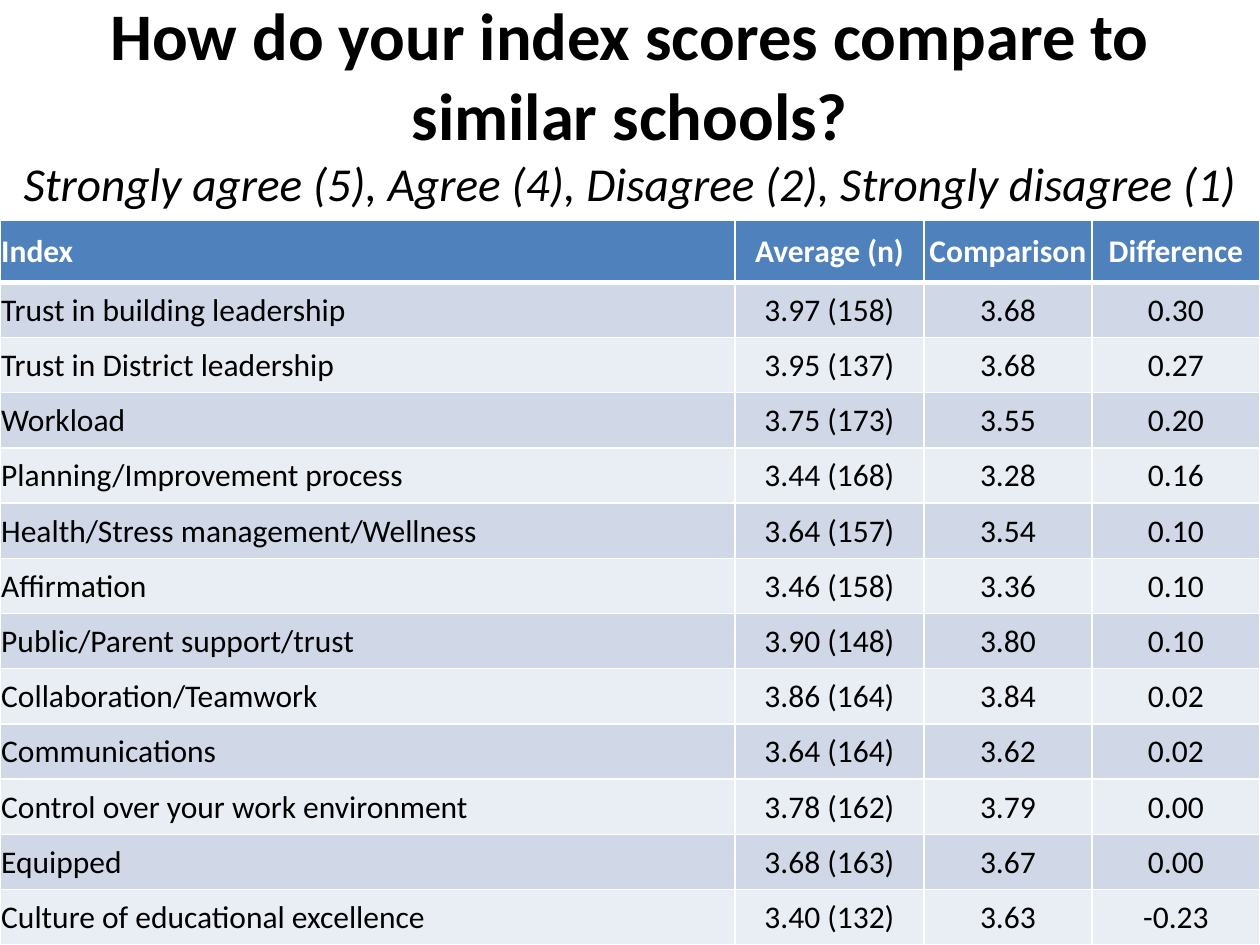
from lxml.etree import SubElement
from pptx import Presentation
from pptx.dml.color import RGBColor
from pptx.enum.text import MSO_ANCHOR as Anchor, PP_ALIGN as Align
from pptx.oxml.ns import qn
from pptx.util import Inches, Pt

TITLE = "How do your index scores compare to similar schools?"
SCALE = "Strongly agree (5), Agree (4), Disagree (2), Strongly disagree (1)"
HEADER = ("Index", "Average (n)", "Comparison", "Difference")
SCORES = [
    ("Trust in building leadership", "3.97 (158)", "3.68", "0.30"),
    ("Trust in District leadership", "3.95 (137)", "3.68", "0.27"),
    ("Workload", "3.75 (173)", "3.55", "0.20"),
    ("Planning/Improvement process", "3.44 (168)", "3.28", "0.16"),
    ("Health/Stress management/Wellness", "3.64 (157)", "3.54", "0.10"),
    ("Affirmation", "3.46 (158)", "3.36", "0.10"),
    ("Public/Parent support/trust", "3.90 (148)", "3.80", "0.10"),
    ("Collaboration/Teamwork", "3.86 (164)", "3.84", "0.02"),
    ("Communications", "3.64 (164)", "3.62", "0.02"),
    ("Control over your work environment", "3.78 (162)", "3.79", "0.00"),
    ("Equipped", "3.68 (163)", "3.67", "0.00"),
    ("Culture of educational excellence", "3.40 (132)", "3.63", "-0.23"),
]

WIDTH, HEIGHT = 10, 7.5
TABLE_TOP, HEADER_HEIGHT = 1.75, 0.49
COLUMN_SHARES = (35, 9, 8, 8)
BLACK, WHITE, BLUE = "000000", "FFFFFF", "4F81BD"
BANDS = ("D0D8E8", "E9EDF4")
THIN, THICK = 1, 3
CELL_FORMAT = {
    "vertical_anchor": Anchor.MIDDLE,
    "margin_left": Inches(0.01),
    "margin_top": Inches(0.01),
    "margin_right": Inches(0.01),
    "margin_bottom": 0,
}


def color(value):
    return RGBColor.from_string(value)


def set_attributes(target, values):
    for name, value in values.items():
        setattr(target, name, value)


def format_font(font, size, fill, bold=False, italic=False):
    set_attributes(font, {"name": "Calibri", "size": Pt(size), "bold": bold, "italic": italic})
    font.color.rgb = color(fill)


def add_borders(cell, top, bottom):
    """Give the cell white borders; call before its fill is set."""
    properties = cell._tc.get_or_add_tcPr()
    for side, width in (("L", THIN), ("R", THIN), ("T", top), ("B", bottom)):
        line = SubElement(properties, qn(f"a:ln{side}"), w=str(Pt(width)))
        SubElement(SubElement(line, qn("a:solidFill")), qn("a:srgbClr"), val=WHITE)


def add_title(slide):
    box = slide.shapes.add_textbox(0, Inches(0.3), Inches(WIDTH), Inches(1.03))
    set_attributes(box.text_frame, {"word_wrap": True, "vertical_anchor": Anchor.MIDDLE})
    paragraph = box.text_frame.paragraphs[0]
    paragraph.alignment = Align.CENTER
    title = paragraph.add_run()
    title.text = TITLE
    format_font(title.font, 38, BLACK, bold=True)
    paragraph.add_line_break()
    scale = paragraph.add_run()
    scale.text = SCALE
    format_font(scale.font, 27, BLACK, italic=True)


def add_score_table(slide):
    rows = [HEADER, *SCORES]
    table_height = HEIGHT - TABLE_TOP
    table = slide.shapes.add_table(
        len(rows), len(HEADER), 0, Inches(TABLE_TOP), Inches(WIDTH), Inches(table_height)
    ).table
    for column, share in zip(table.columns, COLUMN_SHARES):
        column.width = Inches(WIDTH * share / sum(COLUMN_SHARES))
    body_height = (table_height - HEADER_HEIGHT) / len(SCORES)

    for r, row in enumerate(rows):
        is_header = r == 0
        table.rows[r].height = Inches(HEADER_HEIGHT if is_header else body_height)
        for c, text in enumerate(row):
            cell = table.cell(r, c)
            set_attributes(cell, CELL_FORMAT)
            add_borders(cell, THICK if r == 1 else THIN, THICK if is_header else THIN)
            cell.fill.solid()
            cell.fill.fore_color.rgb = color(BLUE if is_header else BANDS[(r - 1) % 2])
            cell.text = text
            paragraph = cell.text_frame.paragraphs[0]
            paragraph.alignment = Align.CENTER if c else Align.LEFT
            format_font(paragraph.runs[0].font, 18, WHITE if is_header else BLACK, bold=is_header)


def main():
    presentation = Presentation()
    presentation.slide_width, presentation.slide_height = Inches(WIDTH), Inches(HEIGHT)
    slide = presentation.slides.add_slide(presentation.slide_layouts[6])
    add_title(slide)
    add_score_table(slide)
    presentation.save("out.pptx")


if __name__ == "__main__":
    main()
